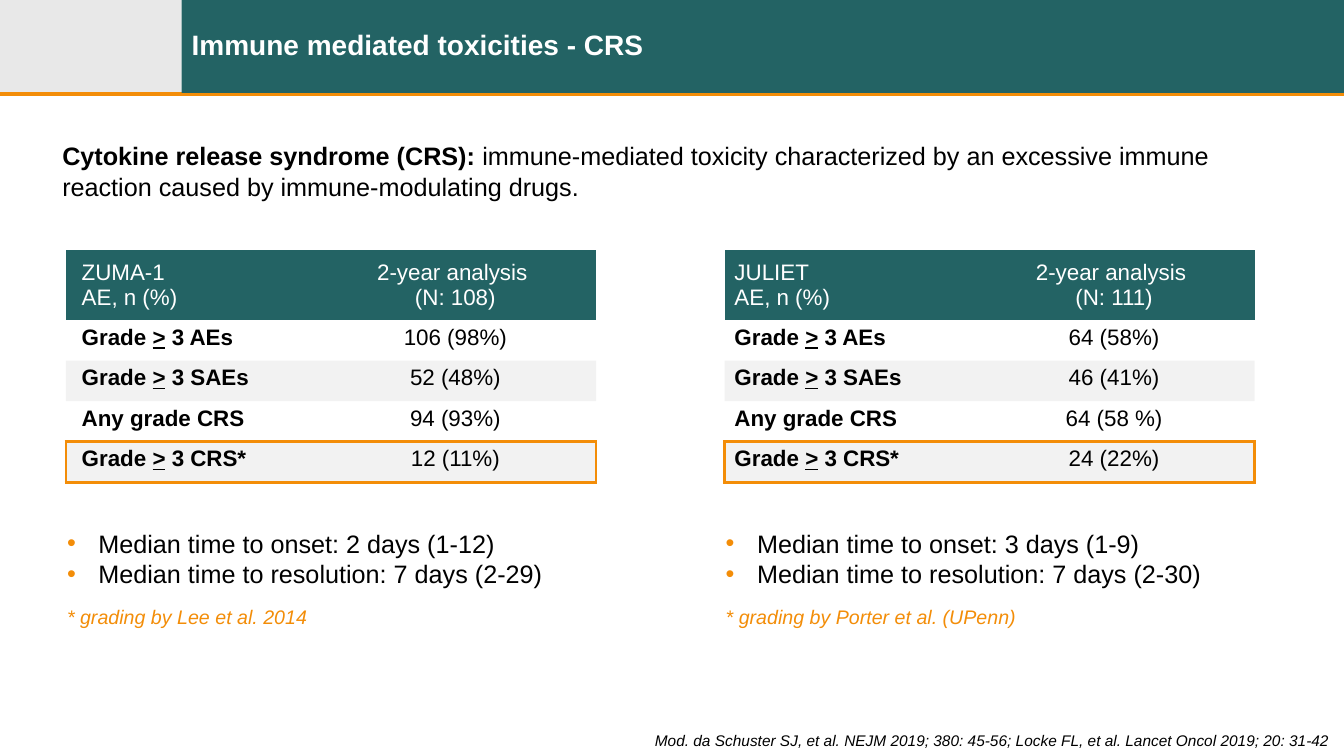
import pptx
import pptx.dml.color
import pptx.enum.shapes
import pptx.enum.text
import pptx.oxml
import pptx.oxml.ns
import pptx.util
from lxml import etree

Cm = pptx.util.Cm
Pt = pptx.util.Pt
ALIGN = pptx.enum.text.PP_ALIGN
ANCHOR = pptx.enum.text.MSO_ANCHOR
COLORS = {"teal": "236364", "orange": "F38D08", "dark": "222222",
          "black": "000000", "white": "FFFFFF"}
NO_GRID_STYLE = "{2D5ABB26-0587-4C30-8999-92F81FD0307C}"


def sub(parent, tag, **attrs):
    return etree.SubElement(parent, pptx.oxml.ns.qn("a:" + tag), **attrs)


class SlideBuilder:
    font = "Arial"

    def __init__(self, slide):
        self.s = slide

    def rgb(self, name):
        return pptx.dml.color.RGBColor.from_string(COLORS[name])

    def fill(self, fill, color, opacity=100):
        fill.solid()
        fill.fore_color.rgb = self.rgb(color)
        if opacity < 100:
            solid = fill._xPr.find(pptx.oxml.ns.qn("a:solidFill"))
            sub(solid[0], "alpha", val=str(opacity * 1000))

    def rect(self, x, y, w, h, color, opacity=100):
        sp = self.s.shapes.add_shape(pptx.enum.shapes.MSO_SHAPE.RECTANGLE,
                                     Cm(x), Cm(y), Cm(w), Cm(h))
        sp.shadow.inherit = False
        sp.line.fill.background()
        self.fill(sp.fill, color, opacity)

    def line(self, x1, y1, x2, y2, color, width):
        cx = self.s.shapes.add_connector(pptx.enum.shapes.MSO_CONNECTOR.STRAIGHT,
                                         Cm(x1), Cm(y1), Cm(x2), Cm(y2))
        cx.line.color.rgb = self.rgb(color)
        cx.line.width = Pt(width)
        sub(cx._element.spPr, "effectLst")

    def run(self, p, text, size, color="black", bold=False, italic=False, underline=False):
        r = p.add_run()
        r.text = text
        r.font.name = self.font
        r.font.size = Pt(size)
        r.font.bold = bold
        r.font.italic = italic
        r.font.underline = underline
        r.font.color.rgb = self.rgb(color)

    def text_box(self, x, y, w, h, anchor=ANCHOR.TOP):
        tf = self.s.shapes.add_textbox(Cm(x), Cm(y), Cm(w), Cm(h)).text_frame
        tf.word_wrap = True
        tf.vertical_anchor = anchor
        return tf

    def bullet(self, p, color):
        pPr = p._p.get_or_add_pPr()
        pPr.set("marL", str(Cm(0.79)))
        pPr.set("indent", str(-Cm(0.79)))
        sub(sub(pPr, "buClr"), "srgbClr", val=COLORS[color])
        sub(pPr, "buFont", typeface=self.font)
        sub(pPr, "buChar", char="•")

    def border(self, cell, sides, color, width):
        tcPr = cell._tc.get_or_add_tcPr()
        for side in sides:
            ln = sub(tcPr, "ln" + side, w=str(Pt(width)))
            sub(sub(ln, "solidFill"), "srgbClr", val=COLORS[color])

    def table(self, x, y, widths, heights):
        tbl = self.s.shapes.add_table(len(heights), len(widths), Cm(x), Cm(y),
                                      Cm(sum(widths)), Cm(sum(heights))).table
        tblPr = tbl._tbl.tblPr
        tblPr.find(pptx.oxml.ns.qn("a:tableStyleId")).text = NO_GRID_STYLE
        tbl.horz_banding = False
        for col, w in zip(tbl.columns, widths):
            col.width = Cm(w)
        for row, h in zip(tbl.rows, heights):
            row.height = Cm(h)
        return tbl

    def trial_table(self, x, trial, patients, results, inset):
        tbl = self.table(x, 6.3, [6.27, 7.09], [1.77] + [1.02] * 4)
        headers = [[trial, "AE, n (%)"], ["2-year analysis ", f"(N: {patients})"]]
        for c, lines in enumerate(headers):
            cell = tbl.cell(0, c)
            cell.vertical_anchor = ANCHOR.MIDDLE
            self.fill(cell.fill, "teal")
            tf = cell.text_frame
            for i, text in enumerate(lines):
                p = tf.add_paragraph() if i else tf.paragraphs[0]
                p.alignment = ALIGN.CENTER if c else ALIGN.LEFT
                self.run(p, text, 16, "white")

        last = len(EVENTS)
        for i, (event, result) in enumerate(zip(EVENTS, results), 1):
            label, value = tbl.cell(i, 0), tbl.cell(i, 1)
            for part in event:
                self.run(label.text_frame.paragraphs[0], part, 16, bold=True,
                         underline=part == ">")
            p = value.text_frame.paragraphs[0]
            p.alignment = ALIGN.CENTER
            self.run(p, result, 16)
            for cell, sides in ((label, "LTB"), (value, "RTB")):
                if i == last:
                    self.border(cell, sides, "orange", 2.25)
                elif i == last - 1:
                    self.border(cell, "B", "orange", 2.25)
                if i % 2:
                    cell.fill.background()
                else:
                    self.fill(cell.fill, "black", 5)
        for i in range(last + 1):
            tbl.cell(i, 0).margin_left = Cm(inset)

    def timing(self, x, onset, resolution, grading):
        tf = self.text_box(x, 13.18, 13.69, 2.82)
        p = tf.paragraphs[0]
        self.bullet(p, "orange")
        self.run(p, f"Median time to onset: {onset}", 18)
        p = tf.add_paragraph()
        self.bullet(p, "orange")
        self.run(p, f"Median time to resolution: {resolution}", 18)
        p = tf.add_paragraph()
        p.space_before = Pt(12)
        self.run(p, f"* grading by {grading}", 14, "orange", italic=True)


EVENTS = [("Grade ", ">", " 3 AEs"), ("Grade ", ">", " 3 SAEs"),
          ("Any grade CRS",), ("Grade ", ">", " 3 CRS*")]


def main():
    prs = pptx.Presentation()
    prs.slide_width, prs.slide_height = Cm(33.87), Cm(19.05)
    b = SlideBuilder(prs.slides.add_slide(prs.slide_layouts[6]))

    b.rect(0, 0, 4.58, 2.34, "dark", 10)
    b.line(0, 2.36, 33.87, 2.36, "orange", 3)
    b.rect(4.58, 0, 29.29, 2.34, "teal")
    p = b.text_box(4.58, 0, 29.2, 2.34, ANCHOR.MIDDLE).paragraphs[0]
    p.line_spacing = 0.9
    b.run(p, "Immune mediated toxicities - CRS", 20, "white", bold=True)

    p = b.text_box(1.32, 3.42, 31.22, 1.8).paragraphs[0]
    b.run(p, "Cytokine release syndrome (CRS): ", 18, bold=True)
    b.run(p, "immune-mediated toxicity characterized by an excessive immune "
             "reaction caused by immune-modulating drugs.", 18)

    b.trial_table(1.66, "ZUMA-1", 108,
                  ["106 (98%)", "52 (48%)", "94 (93%)", "12 (11%)"], 0.4)
    b.timing(1.44, "2 days (1-12)", "7 days (2-29)", "Lee et al. 2014")
    b.trial_table(18.26, "JULIET", 111,
                  ["64 (58%)", "46 (41%)", "64 (58 %)", "24 (22%)"], 0.25)
    b.timing(18.04, "3 days (1-9)", "7 days (2-30)", "Porter et al. (UPenn)")

    p = b.text_box(4.58, 18.31, 29.19, 0.74).paragraphs[0]
    p.alignment = ALIGN.RIGHT
    b.run(p, "Mod. da Schuster SJ, et al. NEJM 2019; 380: 45-56; "
             "Locke FL, et al. Lancet Oncol 2019; 20: 31-42", 11, italic=True)

    prs.save("out.pptx")


if __name__ == "__main__":
    main()
